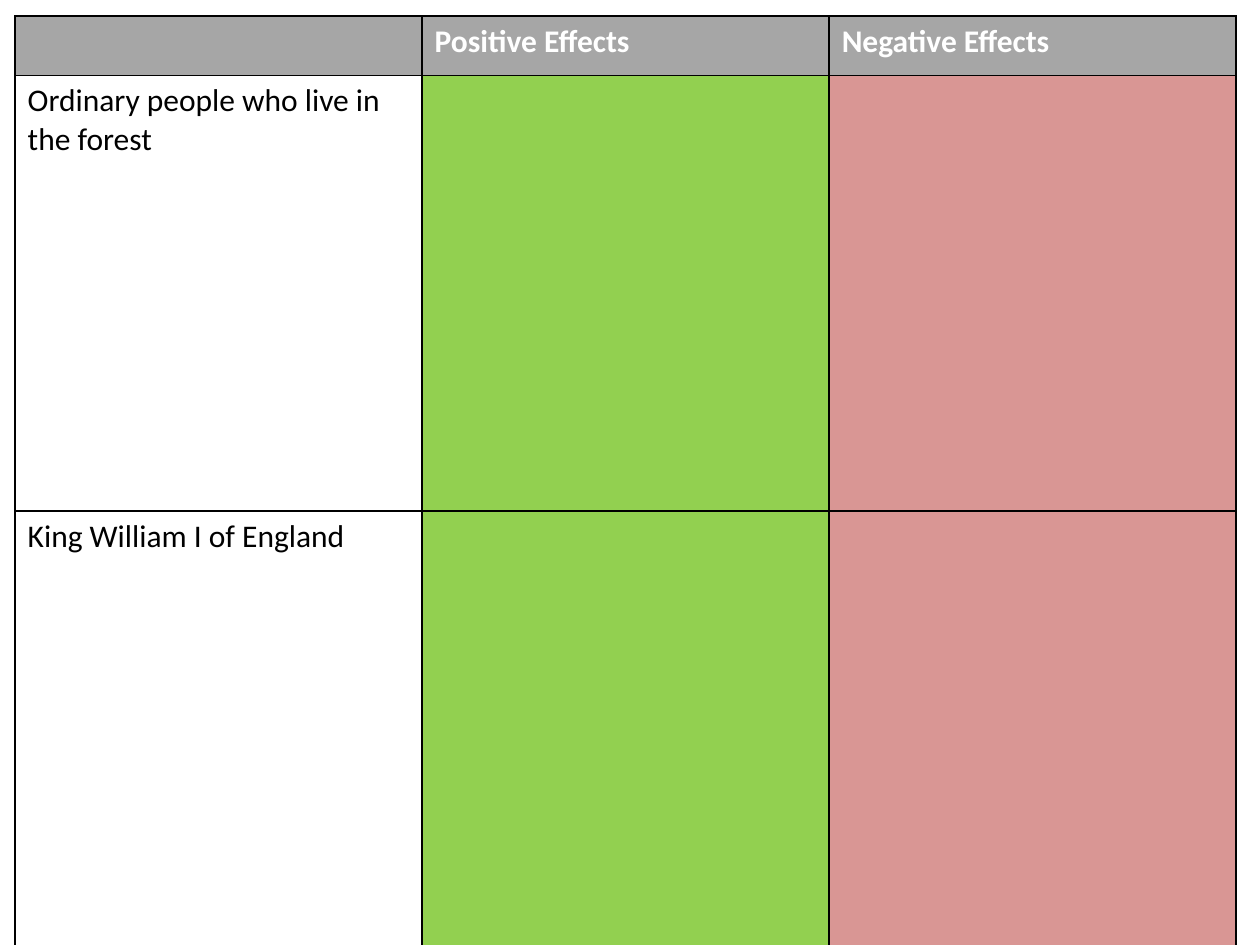
"""Build a slide with a grid of positive and negative effects by group."""
from dataclasses import dataclass
from lxml.etree import SubElement as Sub
from pptx import Presentation as Deck
from pptx.dml.color import RGBColor as Rgb
from pptx.oxml.ns import qn
from pptx.util import Pt

HEADS = ["", "Positive Effects", "Negative Effects"]
GROUPS = ["Ordinary people who live in the forest", "King William I of England"]
LEFT, TOP = 8.64, 9.2
WIDE = 232.6
HEAD_H, BODY_H = 33.8, 249


@dataclass(frozen=True)
class Theme:
    font: str = "Calibri"
    size: int = 18
    head: str = "A6A6A6"
    light: str = "FFFFFF"
    ink: str = "000000"
    cols: tuple = ("FFFFFF", "92D050", "D99694")
    line: int = 1


LOOK = Theme()


def edge(cell):
    """Draw a solid line on each side of a cell."""
    props = cell._tc.get_or_add_tcPr()
    for at, side in enumerate(("lnL", "lnR", "lnT", "lnB")):
        line = Sub(props, qn(f"a:{side}"), w=str(Pt(LOOK.line)))
        Sub(Sub(line, qn("a:solidFill")), qn("a:srgbClr"), val=LOOK.ink)
        props.insert(at, line)


def style(cell, text, fill, ink, bold):
    """Set the text, fill and lines of a cell."""
    cell.text = text
    cell.fill.solid()
    cell.fill.fore_color.rgb = Rgb.from_string(fill)
    font = cell.text_frame.paragraphs[0].font
    font.name, font.size, font.bold = LOOK.font, Pt(LOOK.size), bold
    font.color.rgb = Rgb.from_string(ink)
    edge(cell)


def main():
    """Make the deck and save it."""
    deck = Deck()
    deck.slide_width, deck.slide_height = Pt(720), Pt(540)
    slide = deck.slides.add_slide(deck.slide_layouts[6])
    rows = [HEADS] + [[name, "", ""] for name in GROUPS]
    highs = [HEAD_H] + [BODY_H] * len(GROUPS)
    grid = slide.shapes.add_table(
        len(rows), len(HEADS), Pt(LEFT), Pt(TOP),
        Pt(WIDE * len(HEADS)), Pt(sum(highs))).table
    for col in grid.columns:
        col.width = Pt(WIDE)
    for r, (row, high) in enumerate(zip(rows, highs)):
        grid.rows[r].height = Pt(high)
        top = r == 0
        for c, text in enumerate(row):
            style(grid.cell(r, c), text, LOOK.head if top else LOOK.cols[c],
                  LOOK.light if top else LOOK.ink, top)
    deck.save("out.pptx")


if __name__ == "__main__":
    main()
